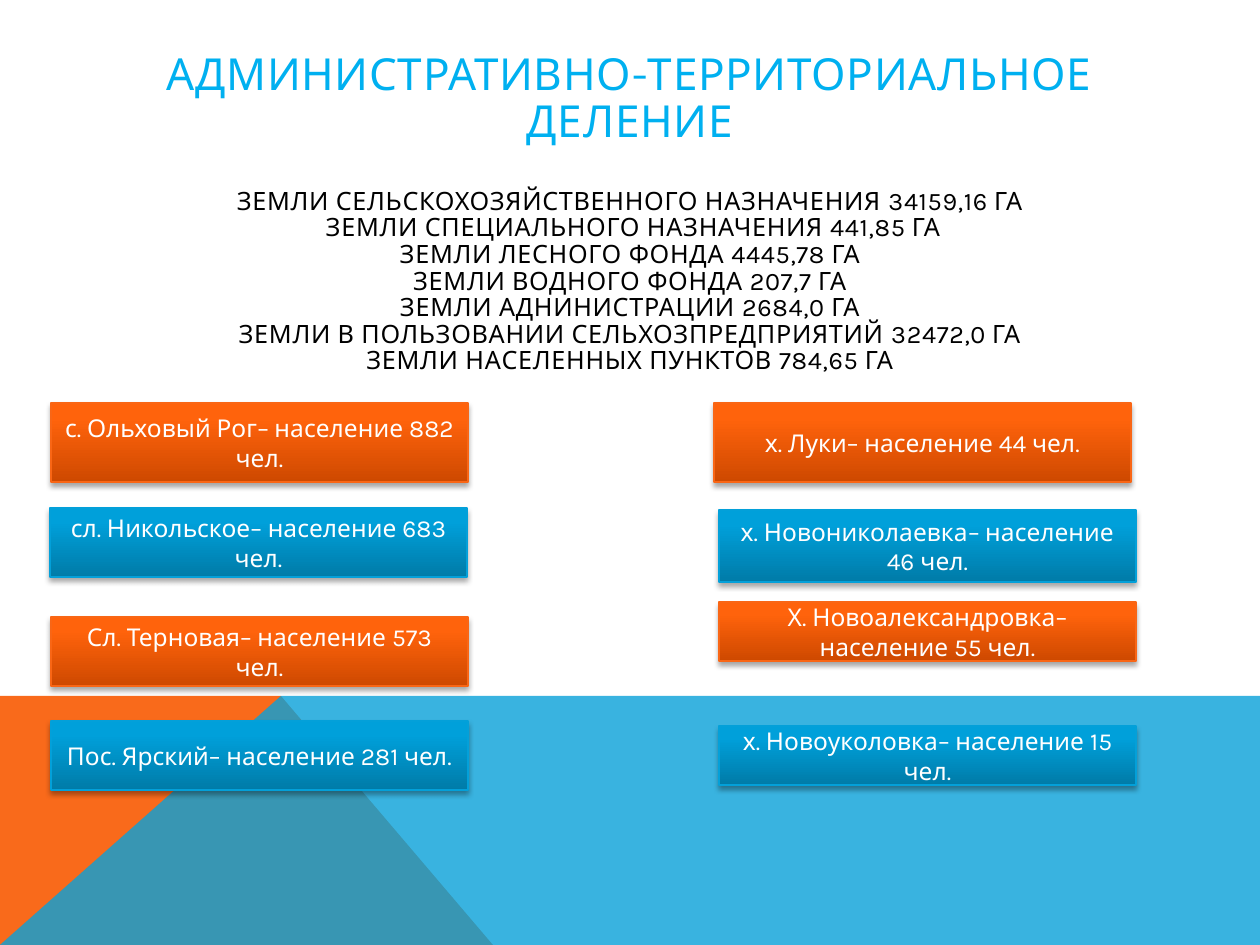
from dataclasses import dataclass

from lxml import etree
from pptx import Presentation
from pptx.dml.color import RGBColor
from pptx.enum.shapes import MSO_SHAPE
from pptx.enum.text import MSO_ANCHOR, PP_ALIGN
from pptx.oxml.ns import qn
from pptx.util import Pt

RECT = MSO_SHAPE.RECTANGLE
MIDDLE = MSO_ANCHOR.MIDDLE
CENTER = PP_ALIGN.CENTER
SCALE = 914400 / 126


@dataclass(frozen=True)
class Theme:
    """Colours, font and type sizes of the slide."""
    font: str = "Karla"
    title: str = "00B0F0"
    ink: str = "000000"
    label: str = "FFFFFF"
    wedge: str = "F96A1B"
    band: str = "08A1D9"
    orange: tuple = ("CE4900", "FF630C", "F96615")
    blue: tuple = ("007BA8", "00A0DA", "03A0D9")
    title_size: float = 25.2
    land_size: float = 14.4
    label_size: float = 14


THEME = Theme()

LANDS = [
    "ЗЕМЛИ СЕЛЬСКОХОЗЯЙСТВЕННОГО НАЗНАЧЕНИЯ 34159,16 ГА",
    " ЗЕМЛИ СПЕЦИАЛЬНОГО НАЗНАЧЕНИЯ 441,85 ГА",
    "ЗЕМЛИ ЛЕСНОГО ФОНДА 4445,78 ГА",
    "ЗЕМЛИ ВОДНОГО ФОНДА 207,7 ГА",
    "ЗЕМЛИ АДНИНИСТРАЦИИ 2684,0 ГА",
    "ЗЕМЛИ В ПОЛЬЗОВАНИИ СЕЛЬХОЗПРЕДПРИЯТИЙ 32472,0 ГА",
    "ЗЕМЛИ НАСЕЛЕННЫХ ПУНКТОВ 784,65 ГА",
]

LEFT_VILLAGES = [
    ("с. Ольховый Рог– население 882 чел.", 1, 0, 79),
    ("сл. Никольское– население 683 чел.", 0, 105, 69),
    ("Сл. Терновая– население 573 чел.", 1, 214, 69),
    ("Пос. Ярский– население 281 чел.", 1, 318, 69),
]

RIGHT_VILLAGES = [
    ("х. Луки– население 44 чел.", 0, 0, 79),
    ("х. Новониколаевка– население 46 чел.", 5, 107, 72),
    ("Х. Новоалександровка– население 55 чел.", 5, 199, 59),
    ("х. Новоуколовка– население 15 чел.", 5, 323, 59),
]


def px(*lengths):
    """Turn pixel lengths into EMU."""
    return [round(n * SCALE) for n in lengths]


def rgb(color):
    """Turn a hex string into a colour."""
    return RGBColor.from_string(color)


def write(p, text, size, color, tracking=0, spacing=None, before=0):
    """Write one centred paragraph in the given format."""
    p.alignment = CENTER
    if spacing:
        p.line_spacing = spacing
    if before:
        p.space_before = Pt(before)
    r = p.add_run()
    r.text = text
    r.font.name = THEME.font
    r.font.size = Pt(size)
    r.font.color.rgb = rgb(color)
    if tracking:
        r.font._element.set("spc", str(tracking))


def set_alpha(color_element, percent):
    """Give a colour element its opacity."""
    etree.SubElement(color_element, qn("a:alpha"), val=str(percent * 1000))


def add_shadow(s):
    """Add a soft shadow below a shape."""
    s.shadow.inherit = False
    effects = s._element.spPr.find(qn("a:effectLst"))
    shadow = etree.SubElement(
        effects, qn("a:outerShdw"), blurRad=str(Pt(3.1)), dist=str(Pt(1.8)),
        dir="5400000", rotWithShape="0")
    set_alpha(etree.SubElement(shadow, qn("a:srgbClr"), val=THEME.ink), 35)


def add_polygon(slide, points, color, opacity=100):
    """Draw a filled outline without a border."""
    builder = slide.shapes.build_freeform(*points[0], scale=SCALE)
    builder.add_line_segments(points[1:], close=True)
    s = builder.convert_to_shape()
    s.shadow.inherit = False
    s.fill.solid()
    s.fill.fore_color.rgb = rgb(color)
    s.line.fill.background()
    if opacity < 100:
        set_alpha(s._element.spPr.find(".//" + qn("a:srgbClr")), opacity)


def add_backdrop(slide, x, y, w, h):
    """Draw the orange wedge and the translucent blue band."""
    peak, bottom = (x + 281, y), y + h
    add_polygon(slide, [(x, bottom), (x, y), peak, (x + 493, bottom)],
                THEME.wedge)
    add_polygon(slide, [(x, bottom), peak, (x + w, y), (x + w, bottom)],
                THEME.band, opacity=80)


def add_heading(slide, x, y, w, h):
    """Place the title and the list of land categories."""
    tf = slide.shapes.add_textbox(*px(x, y, w, h)).text_frame
    tf.word_wrap = True
    tf.vertical_anchor = MIDDLE
    write(tf.paragraphs[0], "АДМИНИСТРАТИВНО-ТЕРРИТОРИАЛЬНОЕ ДЕЛЕНИЕ",
          THEME.title_size, THEME.title, tracking=40, spacing=0.88)
    for i, land in enumerate(LANDS):
        write(tf.add_paragraph(), land, THEME.land_size, THEME.ink,
              tracking=40, spacing=0.88, before=0 if i else 24)


def add_village(slide, text, colors, x, y, w, h):
    """Place one village box with a gradient fill."""
    dark, light, edge = colors
    s = slide.shapes.add_shape(RECT, *px(x, y, w, h))
    s.fill.gradient()
    s.fill.gradient_angle = 90
    for stop, color, position in zip(s.fill.gradient_stops, (dark, light), (0, 0.8)):
        stop.color.rgb = rgb(color)
        stop.position = position
    s.line.color.rgb = rgb(edge)
    s.line.width = Pt(0.75)
    add_shadow(s)
    tf = s.text_frame
    tf.word_wrap = True
    tf.vertical_anchor = MIDDLE
    write(tf.paragraphs[0], text, THEME.label_size, THEME.label)


def add_villages(slide, villages, x, y, w):
    """Place a column of village boxes in alternating colours."""
    for i, (text, dx, dy, h) in enumerate(villages):
        colors = THEME.blue if i % 2 else THEME.orange
        add_village(slide, text, colors, x + dx, y + dy, w, h)


def main():
    """Build and save the slide."""
    prs = Presentation()
    prs.slide_width, prs.slide_height = px(1260, 945)
    slide = prs.slides.add_slide(prs.slide_layouts[6])
    add_backdrop(slide, 0, 696, 1260, 249)
    add_heading(slide, 63, 66, 1134, 297)
    add_villages(slide, LEFT_VILLAGES, 50, 403, 417)
    add_villages(slide, RIGHT_VILLAGES, 714, 403, 417)
    prs.save("out.pptx")


if __name__ == "__main__":
    main()
